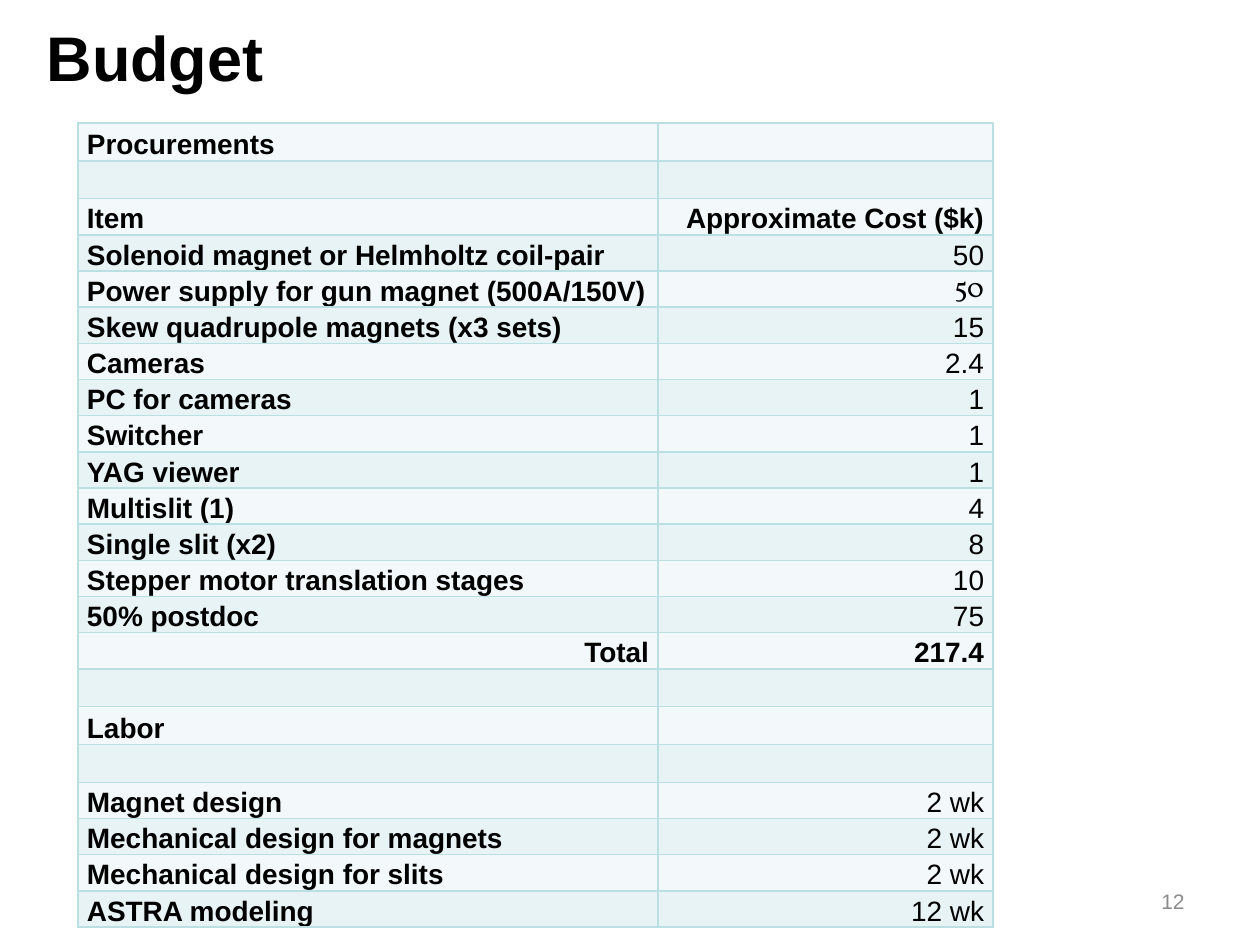
from lxml.etree import SubElement
from pptx import Presentation
from pptx.dml.color import RGBColor
from pptx.enum.text import MSO_ANCHOR as Anchor, PP_ALIGN as Align
from pptx.oxml.ns import qn
from pptx.util import Emu, Pt

PX = 914400 / 126
COLORS = {
    "text": "000000",
    "number": "8C8C8C",
    "border": "BBE0E3",
    "odd": "F3F9FA",
    "even": "E7F3F4",
}
ROWS = [
    ("Procurements", ""),
    ("", ""),
    ("Item", "Approximate Cost ($k)"),
    ("Solenoid magnet or Helmholtz coil-pair", "50"),
    ("Power supply for gun magnet (500A/150V)", "50"),
    ("Skew quadrupole magnets (x3 sets)", "15"),
    ("Cameras", "2.4"),
    ("PC for cameras", "1"),
    ("Switcher", "1"),
    ("YAG viewer", "1"),
    ("Multislit (1)", "4"),
    ("Single slit (x2)", "8"),
    ("Stepper motor translation stages", "10"),
    ("50% postdoc", "75"),
    ("Total", "217.4"),
    ("", ""),
    ("Labor", ""),
    ("", ""),
    ("Magnet design", "2 wk"),
    ("Mechanical design for magnets", "2 wk"),
    ("Mechanical design for slits", "2 wk"),
    ("ASTRA modeling", "12 wk"),
]
BOLD_ROWS = ("Item", "Total")
SERIF_ROW = "Power supply for gun magnet (500A/150V)"


def px(length):
    """Turn a length in px into EMU."""
    return Emu(round(length * PX))


def write(frame, text, size=16, font="Arial", color="text", bold=False, align=Align.LEFT):
    """Write one formatted paragraph into a text frame."""
    paragraph = frame.paragraphs[0]
    paragraph.alignment = align
    run = paragraph.add_run()
    run.text = text
    run.font.size = Pt(size)
    run.font.name = font
    run.font.bold = bold
    run.font.color.rgb = RGBColor.from_string(COLORS[color])


def add_title(slide, left, top, width, height):
    """Place the slide title in its placeholder."""
    title = slide.shapes.title
    title.left, title.top, title.width, title.height = map(px, (left, top, width, height))
    title.text_frame.vertical_anchor = Anchor.MIDDLE
    write(title.text_frame, "Budget", size=36, bold=True)


def add_page_number(slide, left, top, width, height):
    """Place the page number at the right of its box."""
    box = slide.shapes.add_textbox(*map(px, (left, top, width, height)))
    box.text_frame.word_wrap = True
    box.text_frame.vertical_anchor = Anchor.MIDDLE
    write(box.text_frame, "12", size=12, color="number", align=Align.RIGHT)


def style_cell(cell, fill):
    """Give a cell its margins, borders and fill."""
    cell.margin_left = cell.margin_right = px(9)
    cell.margin_top = cell.margin_bottom = 0
    cell.vertical_anchor = Anchor.BOTTOM
    properties = cell._tc.get_or_add_tcPr()
    for side in ("a:lnL", "a:lnR", "a:lnT", "a:lnB"):
        line = SubElement(properties, qn(side), w=str(Pt(1)))
        solid = SubElement(line, qn("a:solidFill"))
        SubElement(solid, qn("a:srgbClr"), val=COLORS["border"])
    cell.fill.solid()
    cell.fill.fore_color.rgb = RGBColor.from_string(COLORS[fill])


def add_budget_table(slide, left, top, width, height, item_width):
    """Place the table of items and costs."""
    box = map(px, (left, top, width, height))
    table = slide.shapes.add_table(len(ROWS), 2, *box).table
    table.first_row = table.horz_banding = False
    table.columns[0].width = px(item_width)
    table.columns[1].width = px(width - item_width)
    for index, (item, cost) in enumerate(ROWS):
        table.rows[index].height = px(height / len(ROWS))
        item_cell, cost_cell = table.rows[index].cells
        for cell in (item_cell, cost_cell):
            style_cell(cell, "even" if index % 2 else "odd")
        if item:
            align = Align.RIGHT if item == "Total" else Align.LEFT
            write(item_cell.text_frame, item, bold=True, align=align)
        if cost:
            font = "Vollkorn" if item == SERIF_ROW else "Arial"
            write(cost_cell.text_frame, cost, font=font, bold=item in BOLD_ROWS, align=Align.RIGHT)


def main():
    """Build and save the budget slide."""
    presentation = Presentation()
    presentation.slide_width, presentation.slide_height = px(1260), px(945)
    slide = presentation.slides.add_slide(presentation.slide_layouts[5])
    add_title(slide, 34, 0, 1145, 113)
    add_page_number(slide, 903, 876, 294, 50)
    add_budget_table(slide, 78, 123, 915, 796, item_width=580)
    presentation.save("out.pptx")


if __name__ == "__main__":
    main()
